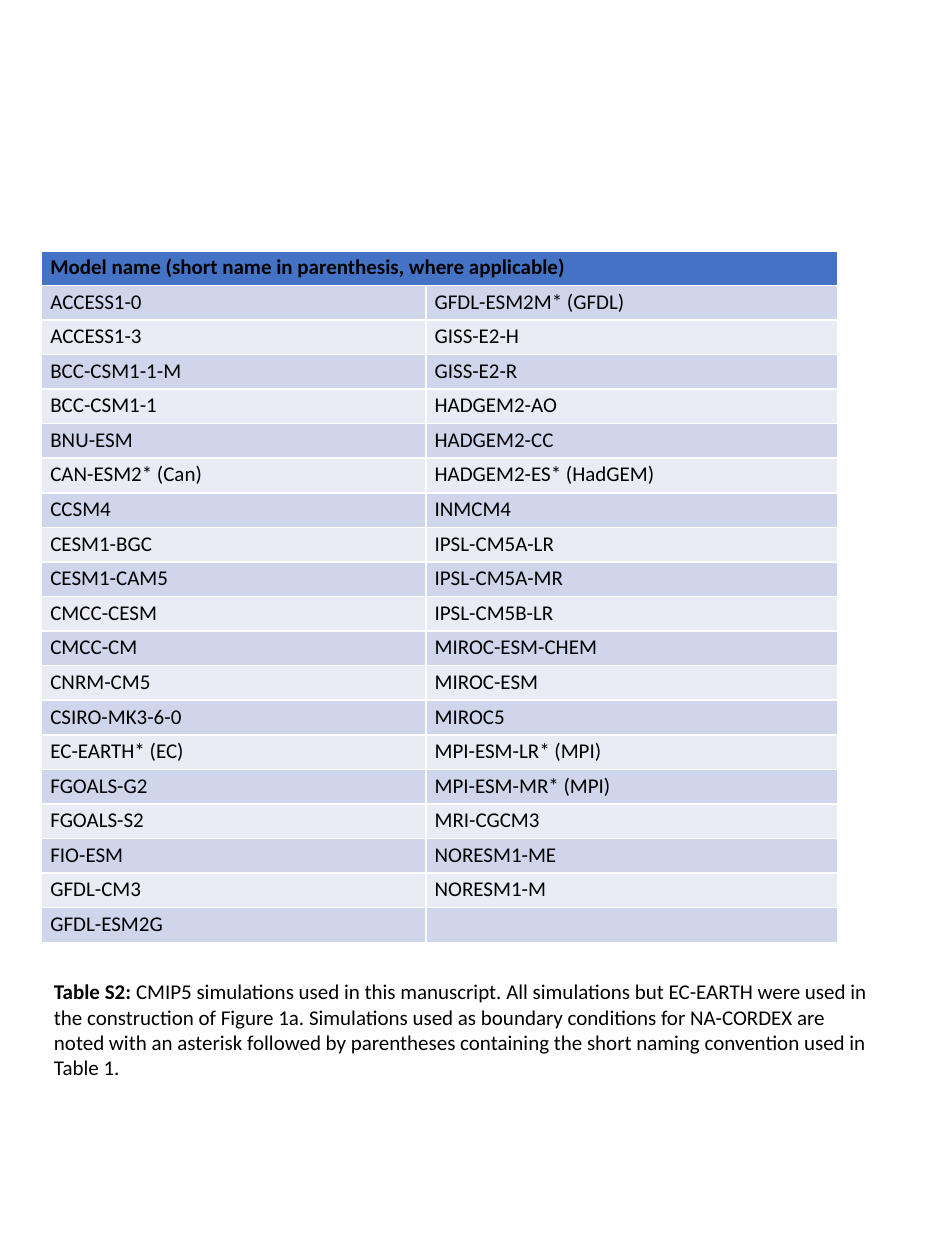
from lxml import etree
from pptx import Presentation
from pptx import util as u
from pptx.dml.color import RGBColor
from pptx.enum import text
from pptx.oxml.ns import qn

HEADING = "Model name (short name in parenthesis, where applicable)"
MODELS = [
    "ACCESS1-0", "ACCESS1-3", "BCC-CSM1-1-M", "BCC-CSM1-1", "BNU-ESM",
    "CAN-ESM2* (Can)", "CCSM4", "CESM1-BGC", "CESM1-CAM5", "CMCC-CESM",
    "CMCC-CM", "CNRM-CM5", "CSIRO-MK3-6-0", "EC-EARTH* (EC)", "FGOALS-G2",
    "FGOALS-S2", "FIO-ESM", "GFDL-CM3", "GFDL-ESM2G",
    "GFDL-ESM2M* (GFDL)", "GISS-E2-H", "GISS-E2-R", "HADGEM2-AO",
    "HADGEM2-CC", "HADGEM2-ES* (HadGEM)", "INMCM4", "IPSL-CM5A-LR",
    "IPSL-CM5A-MR", "IPSL-CM5B-LR", "MIROC-ESM-CHEM", "MIROC-ESM", "MIROC5",
    "MPI-ESM-LR* (MPI)", "MPI-ESM-MR* (MPI)", "MRI-CGCM3", "NORESM1-ME",
    "NORESM1-M",
]
CAPTION_LABEL = "Table S2: "
CAPTION = (
    "CMIP5 simulations used in this manuscript. All simulations but EC-EARTH "
    "were used in the construction of Figure 1a. Simulations used as boundary "
    "conditions for NA-CORDEX are noted with an asterisk followed by "
    "parentheses containing the short naming convention used in Table 1."
)

BLACK = RGBColor(0x00, 0x00, 0x00)
BLUE = RGBColor(0x44, 0x72, 0xC4)
BANDS = [RGBColor(0xCF, 0xD5, 0xEA), RGBColor(0xE9, 0xEB, 0xF5)]
FONT, SIZE = "Calibri", 12

LEFT, TABLE_TOP, TABLE_HEIGHT = 0.33, 1.99, 5.49
COLUMN_WIDTHS = [3.05, 3.27]
MODEL_ROWS = -(-len(MODELS) // len(COLUMN_WIDTHS))


def add_text(para, words, bold=False, spacing=None):
    if spacing:
        para.line_spacing = spacing
    span = para.add_run()
    span.text = words
    span.font.name, span.font.size = FONT, u.Pt(SIZE)
    span.font.bold, span.font.color.rgb = bold, BLACK


def fill_cell(cell, words, color, bold=False):
    cell.fill.solid()
    cell.fill.fore_color.rgb = color
    cell.margin_left = cell.margin_right = u.Inches(0.07)
    cell.margin_top = cell.margin_bottom = 0
    para = cell.text_frame.paragraphs[0]
    if words:
        add_text(para, words, bold=bold, spacing=1.15)
    else:  # keeps the default 18 pt from stretching the row
        etree.SubElement(para._p, qn("a:endParaRPr"), sz=str(SIZE * 100))


def add_model_table(page):
    rows = MODEL_ROWS + 1
    table = page.shapes.add_table(
        rows, len(COLUMN_WIDTHS), u.Inches(LEFT), u.Inches(TABLE_TOP),
        u.Inches(sum(COLUMN_WIDTHS)), u.Inches(TABLE_HEIGHT)).table
    for column, width in zip(table.columns, COLUMN_WIDTHS):
        column.width = u.Inches(width)
    for row in table.rows:
        row.height = u.Inches(TABLE_HEIGHT / rows)

    table.cell(0, 0).merge(table.cell(0, len(COLUMN_WIDTHS) - 1))
    fill_cell(table.cell(0, 0), HEADING, BLUE, bold=True)
    for index in range(MODEL_ROWS * len(COLUMN_WIDTHS)):
        column, row = divmod(index, MODEL_ROWS)
        name = MODELS[index] if index < len(MODELS) else ""
        fill_cell(table.cell(row + 1, column), name, BANDS[row % 2])


def add_caption(page):
    box = page.shapes.add_textbox(
        u.Inches(LEFT), u.Inches(7.72), u.Inches(6.72), u.Inches(0.91))
    frame = box.text_frame
    frame.word_wrap = True
    frame.auto_size = text.MSO_AUTO_SIZE.SHAPE_TO_FIT_TEXT
    add_text(frame.paragraphs[0], CAPTION_LABEL, bold=True)
    add_text(frame.paragraphs[0], CAPTION)


def main():
    deck = Presentation()
    deck.slide_width, deck.slide_height = u.Inches(7.5), u.Inches(10)
    page = deck.slides.add_slide(deck.slide_layouts.get_by_name("Blank"))
    add_model_table(page)
    add_caption(page)
    deck.save("out.pptx")


if __name__ == "__main__":
    main()
